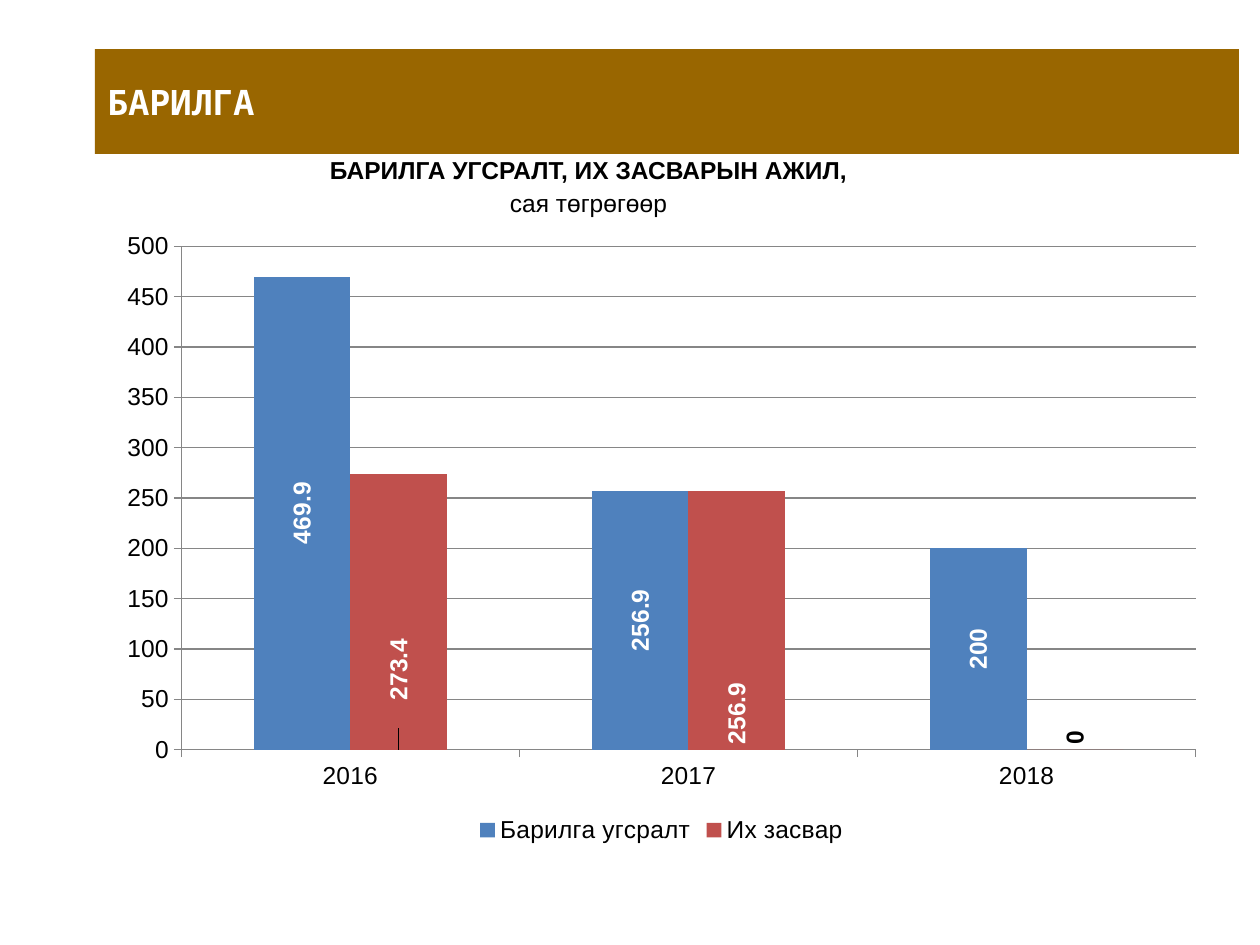
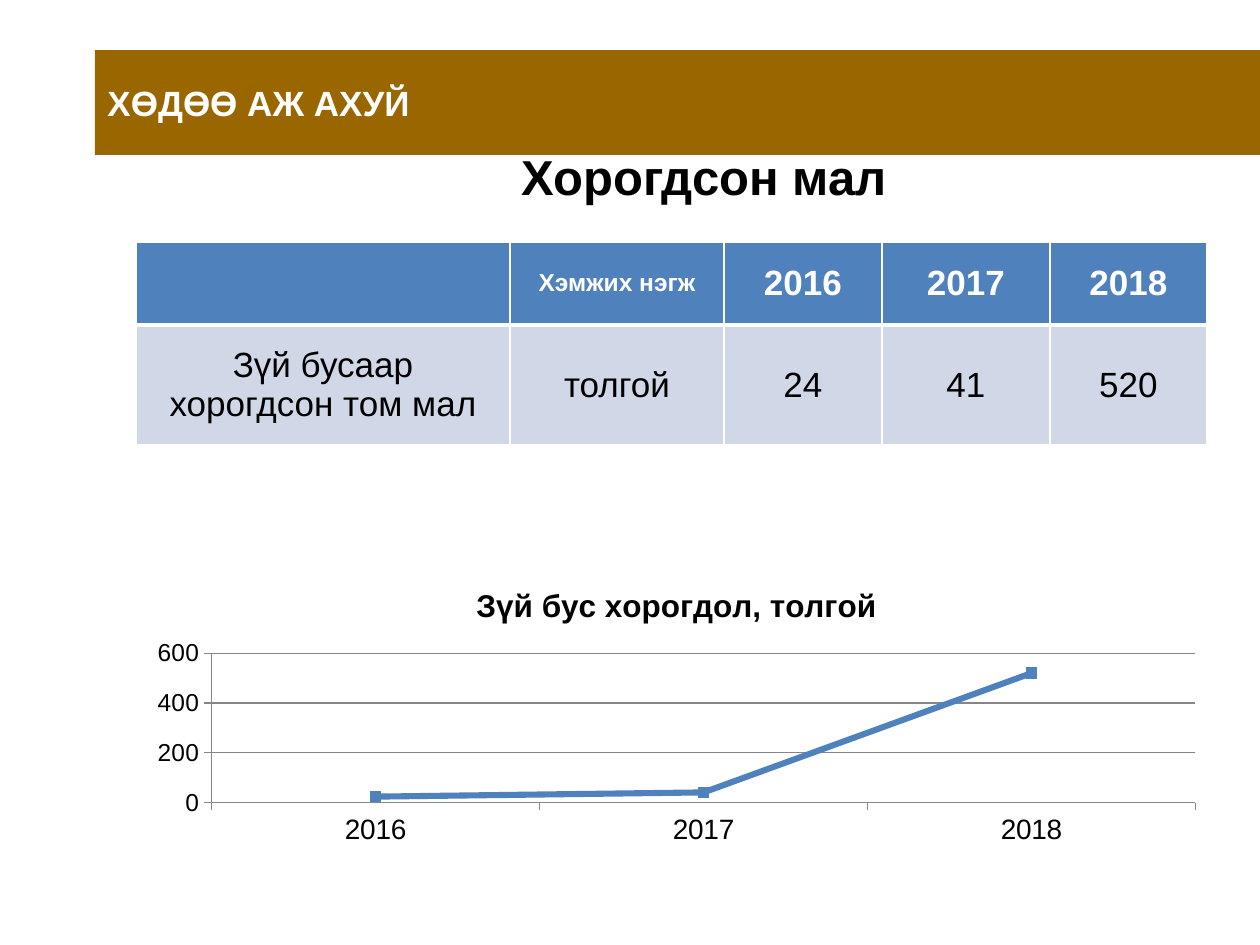
from dataclasses import dataclass
from typing import Any

from lxml import etree
from pptx import Presentation
from pptx.chart.data import CategoryChartData
from pptx.dml.color import RGBColor
from pptx.enum.chart import (XL_CHART_TYPE, XL_LABEL_POSITION, XL_LEGEND_POSITION,
                             XL_MARKER_STYLE, XL_TICK_MARK)
from pptx.enum.shapes import MSO_SHAPE
from pptx.enum.text import MSO_ANCHOR, PP_ALIGN
from pptx.oxml.ns import qn
from pptx.util import Emu, Pt

EMU_PER_PX = 914400 / 126

COLUMNS = XL_CHART_TYPE.COLUMN_CLUSTERED
LINE = XL_CHART_TYPE.LINE_MARKERS_STACKED
CENTER_LABEL = XL_LABEL_POSITION.CENTER
BASE_LABEL = XL_LABEL_POSITION.INSIDE_BASE
LEGEND_BOTTOM = XL_LEGEND_POSITION.BOTTOM
SQUARE = XL_MARKER_STYLE.SQUARE
TICK_OUT = XL_TICK_MARK.OUTSIDE
RECTANGLE = MSO_SHAPE.RECTANGLE
MIDDLE, BOTTOM = MSO_ANCHOR.MIDDLE, MSO_ANCHOR.BOTTOM
LEFT, CENTER = PP_ALIGN.LEFT, PP_ALIGN.CENTER

BROWN = RGBColor(0x99, 0x66, 0x00)
BLUE = RGBColor(0x4F, 0x81, 0xBD)
RED = RGBColor(0xC0, 0x50, 0x4D)
PALE_BLUE = RGBColor(0xD0, 0xD8, 0xE8)
GRAY = RGBColor(0x86, 0x86, 0x86)
WHITE = RGBColor(0xFF, 0xFF, 0xFF)
BLACK = RGBColor(0x00, 0x00, 0x00)

SANS = "Arial"
MONO = "Noto Sans Mono"
PLAIN_TABLE_STYLE = "{2D5ABB26-0587-4C30-8999-92F81FD0307C}"
YEARS = ("2016", "2017", "2018")
LOSSES = (24, 41, 520)


@dataclass(frozen=True)
class Box:
    left: int
    top: int
    width: int
    height: int

    def emu(self) -> tuple[Emu, Emu, Emu, Emu]:
        return px(self.left), px(self.top), px(self.width), px(self.height)


@dataclass(frozen=True)
class Style:
    size: int
    color: RGBColor = BLACK
    bold: bool = False
    name: str = SANS


@dataclass(frozen=True)
class Band:
    title: str
    box: Box
    font: str


@dataclass(frozen=True)
class Bars:
    name: str
    values: tuple[float, ...]
    color: RGBColor
    label_position: Any


BUILDING_BAND = Band("БАРИЛГА", Box(95, 49, 1144, 105), MONO)
FARMING_BAND = Band("ХӨДӨӨ АЖ АХУЙ", Box(95, 50, 1165, 105), SANS)
BUILDING_BARS = (
    Bars("Барилга угсралт", (469.9, 256.9, 200), BLUE, CENTER_LABEL),
    Bars("Их засвар", (273.4, 256.9, 0), RED, BASE_LABEL),
)
TABLE_COLUMNS = (374, 214, 158, 168, 157)
TABLE_ROWS = (83, 120)


def px(length: int) -> Emu:
    return Emu(round(length * EMU_PER_PX))


def set_font(font: Any, style: Style) -> None:
    font.size = Pt(style.size)
    font.bold = style.bold
    font.name = style.name
    font.color.rgb = style.color


def write(p: Any, text: str, style: Style, align: Any = CENTER) -> None:
    p.text = text
    p.alignment = align
    for r in p.runs:
        set_font(r.font, style)


def add_band(slide: Any, band: Band) -> None:
    sp = slide.shapes.add_shape(RECTANGLE, *band.box.emu())
    sp.shadow.inherit = False
    sp.fill.solid()
    sp.fill.fore_color.rgb = BROWN
    sp.line.fill.background()
    tf = sp.text_frame
    tf.word_wrap = True
    tf.vertical_anchor = MIDDLE
    write(tf.paragraphs[0], band.title, Style(20, WHITE, True, band.font), LEFT)


def add_caption(slide: Any) -> None:
    tf = slide.shapes.add_textbox(*Box(315, 136, 609, 88).emu()).text_frame
    tf.word_wrap = True
    tf.margin_left = tf.margin_right = 0
    tf.vertical_anchor = BOTTOM
    heading, unit = tf.paragraphs[0], tf.add_paragraph()
    write(heading, "БАРИЛГА УГСРАЛТ, ИХ ЗАСВАРЫН АЖИЛ,", Style(14, bold=True))
    heading._p.get_or_add_pPr().set("marR", str(px(62)))
    write(unit, "сая төгрөгөөр", Style(14))
    unit.space_before = Pt(2)


def add_chart(slide: Any, kind: Any, box: Box, series: dict[str, tuple[float, ...]]) -> Any:
    data = CategoryChartData()
    data.categories = YEARS
    for name, values in series.items():
        data.add_series(name, values)
    chart = slide.shapes.add_chart(kind, *box.emu(), data).chart
    set_font(chart.font, Style(14))
    chart.has_legend = chart.has_title = False
    chart.plots[0].vary_by_categories = False
    return chart


def format_axes(chart: Any, category_size: int, maximum: int, step: int) -> None:
    values = chart.value_axis
    values.minimum_scale, values.maximum_scale, values.major_unit = 0, maximum, step
    values.has_major_gridlines = True
    for axis, size in ((chart.category_axis, category_size), (values, 14)):
        axis.major_tick_mark = TICK_OUT
        set_font(axis.tick_labels.font, Style(size))
        axis.format.line.color.rgb = GRAY
    values.major_gridlines.format.line.color.rgb = GRAY


def shift_label_up(label: Any, share: float) -> None:
    """Move a data label up by a share of the chart height."""
    layout = etree.Element(qn("c:layout"))
    manual = etree.SubElement(layout, qn("c:manualLayout"))
    for axis, offset in (("x", 0), ("y", -share)):
        etree.SubElement(manual, qn(f"c:{axis}"), val=str(offset))
    label._get_or_add_dLbl().insert(1, layout)


def add_building_chart(slide: Any) -> None:
    chart = add_chart(slide, COLUMNS, Box(105, 220, 1113, 629),
                      {bars.name: bars.values for bars in BUILDING_BARS})
    format_axes(chart, 14, 500, 50)
    chart.has_legend = True
    chart.legend.position = LEGEND_BOTTOM
    chart.legend.include_in_layout = False
    set_font(chart.legend.font, Style(14))
    plot = chart.plots[0]
    plot.gap_width, plot.overlap = 150, 0
    for bars, series in zip(BUILDING_BARS, plot.series):
        series.format.fill.solid()
        series.format.fill.fore_color.rgb = bars.color
        labels = series.data_labels
        labels.show_value = True
        labels.position = bars.label_position
        set_font(labels.font, Style(14, WHITE, True))

    repairs = plot.series[1]
    for index, color in ((0, WHITE), (2, BLACK)):
        label = repairs.points[index].data_label
        set_font(label.font, Style(14, color, True))
        label.position = BASE_LABEL
    shift_label_up(repairs.points[0].data_label, 0.07)
    for series in plot.series:
        for body in series._element.iter(qn("a:bodyPr")):
            body.set("rot", "-5400000")
            body.set("vert", "horz")


def add_loss_chart(slide: Any) -> None:
    chart = add_chart(slide, LINE, Box(136, 567, 1081, 284), {"Series 1": LOSSES})
    format_axes(chart, 16, 600, 200)
    chart.has_title = True
    write(chart.chart_title.text_frame.paragraphs[0], "Зүй бус хорогдол, толгой",
          Style(18, bold=True))
    chart.chart_title.include_in_layout = False
    series = chart.plots[0].series[0]
    series.smooth = False
    series.format.line.color.rgb = BLUE
    series.format.line.width = Pt(3.5)
    series.marker.style = SQUARE
    series.marker.size = 6
    series.marker.format.fill.solid()
    series.marker.format.fill.fore_color.rgb = BLUE
    series.marker.format.line.color.rgb = BLUE


def add_plain_table(slide: Any, left: int, top: int, columns: tuple[int, ...],
                    rows: tuple[int, ...]) -> Any:
    box = Box(left, top, sum(columns), sum(rows))
    table = slide.shapes.add_table(len(rows), len(columns), *box.emu()).table
    table._tbl.tblPr.find(qn("a:tableStyleId")).text = PLAIN_TABLE_STYLE
    table.horz_banding = False
    for column, width in zip(table.columns, columns):
        column.width = px(width)
    for row, height in zip(table.rows, rows):
        row.height = px(height)
    for cell in table.iter_cells():
        cell.vertical_anchor = MIDDLE
    return table


def set_borders(cell: Any, widths: dict[str, int]) -> None:
    """Give the cell white borders, ahead of its fill."""
    tc_pr = cell._tc.get_or_add_tcPr()
    for position, (side, width) in enumerate(widths.items()):
        ln = etree.Element(qn(f"a:ln{side}"), w=str(Pt(width)))
        fill = etree.SubElement(ln, qn("a:solidFill"))
        etree.SubElement(fill, qn("a:srgbClr"), val=str(WHITE))
        tc_pr.insert(position, ln)


def add_table_heading(slide: Any) -> None:
    cell = add_plain_table(slide, 410, 136, (588,), (84,)).cell(0, 0)
    cell.fill.background()
    cell.margin_left = cell.margin_right = cell.margin_top = cell.margin_bottom = 0
    write(cell.text_frame.paragraphs[0], "Хорогдсон мал", Style(28, bold=True))


def add_loss_table(slide: Any) -> None:
    table = add_plain_table(slide, 136, 242, TABLE_COLUMNS, TABLE_ROWS)
    rows = (("", "Хэмжих нэгж", *YEARS),
            ("Зүй бусаар хорогдсон том мал", "толгой", *map(str, LOSSES)))
    looks = ((BLUE, Style(20, WHITE, True)), (PALE_BLUE, Style(20)))
    for y, (texts, (fill, style)) in enumerate(zip(rows, looks)):
        for x, text in enumerate(texts):
            cell = table.cell(y, x)
            cell.fill.solid()
            cell.fill.fore_color.rgb = fill
            set_borders(cell, {"L": 1, "R": 1, "T": 3 if y else 1, "B": 1 if y else 3})
            write(cell.text_frame.paragraphs[0], text, style)
    set_font(table.cell(0, 1).text_frame.paragraphs[0].runs[0].font, Style(14, WHITE, True))


def main() -> None:
    prs = Presentation()
    prs.slide_width, prs.slide_height = px(1260), px(945)
    blank = prs.slide_layouts[6]

    building = prs.slides.add_slide(blank)
    add_building_chart(building)
    add_band(building, BUILDING_BAND)
    add_caption(building)

    farming = prs.slides.add_slide(blank)
    add_loss_table(farming)
    add_band(farming, FARMING_BAND)
    add_table_heading(farming)
    add_loss_chart(farming)

    prs.save("out.pptx")


if __name__ == "__main__":
    main()
